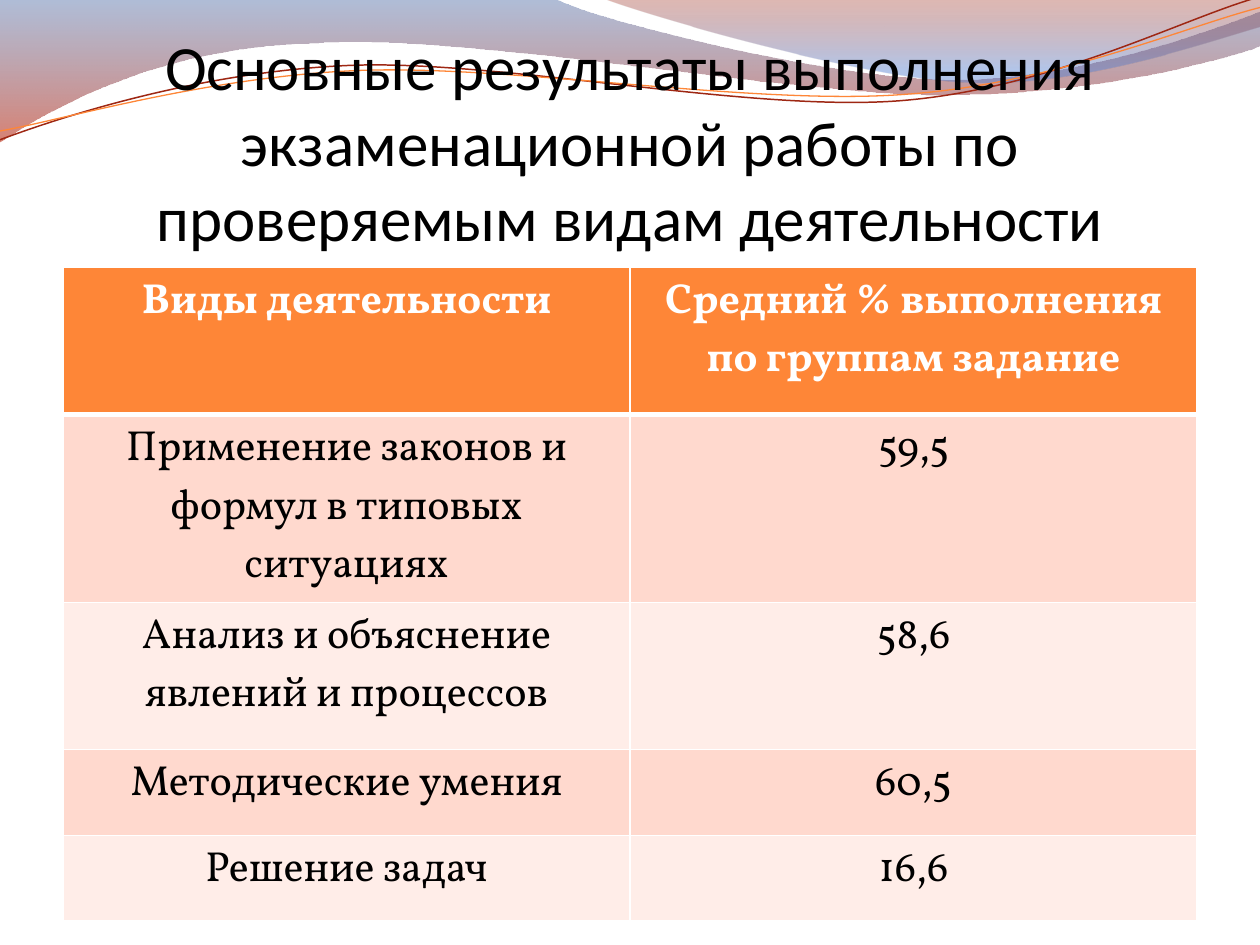
from dataclasses import dataclass
from math import cos, radians, sin

from lxml import etree
from pptx import Presentation, util as u
from pptx.dml.color import RGBColor
from pptx.enum import text
from pptx.oxml.ns import qn


@dataclass(frozen=True)
class Theme:
    head: str = "FE8637"
    bands: tuple = ("FFD9CE", "FFEDE8")
    ink: str = "000000"
    white: str = "FFFFFF"
    title_font: str = "Calibri"
    body_font: str = "Vollkorn"
    title_size: int = 36
    body_size: int = 24


@dataclass(frozen=True)
class Stop:
    place: float
    color: str
    alpha: int


@dataclass(frozen=True)
class Wave:
    start: tuple
    steps: tuple  # two numbers: a straight step; six: a Bézier curve
    stops: tuple = ()
    color: str = ""
    width: float = 0
    pivot: tuple = (0, 0)
    tilt: float = 0  # degrees counter-clockwise around the pivot


THEME = Theme()
UNITS = 1000  # freeform units per inch

WAVES = (
    Wave((0, 0), (
        (4.4, -0.01),
        (4.76, 0.17, 6.64, 0.63, 7.58, 0.63),
        (8.53, 0.63, 9.58, 0.26, 10, 0.09),
        (10.01, 0.36),
        (9.83, 0.44, 8.7, 0.76, 7.46, 0.75),
        (6.22, 0.75, 3.82, 0.28, 2.57, 0.34),
        (1.29, 0.36, 0.46, 0.83, -0.01, 1.13),
        (0, 0),
    ), stops=(Stop(0, "4F6EA8", 45), Stop(1, "B61A00", 55))),
    Wave((4.79, -0.01), (
        (5.09, 0.11, 6.82, 0.62, 7.69, 0.65),
        (8.56, 0.69, 9.61, 0.32, 10, 0.21),
        (10, 0),
        (4.79, -0.01),
    ), stops=(Stop(0, "951500", 30), Stop(0.8, "5681D1", 45))),
    Wave((0, 1.11), (
        (0.48, 0.93, 1.58, 0.57, 2.77, 0.52),
        (3.95, 0.47, 5.93, 0.89, 7.13, 0.8),
        (8.33, 0.71, 9.38, 0.15, 9.98, -0.02),
    ), color="9E2713", width=0.85, pivot=(4.99, 0.57), tilt=2.7),
    Wave((0, 1.04), (
        (0.47, 0.96, 1.64, 0.61, 2.83, 0.56),
        (4.03, 0.51, 5.97, 0.84, 7.17, 0.75),
        (8.36, 0.67, 9.41, 0.21, 10, 0.06),
    ), color="FE8637", width=0.75, pivot=(5, 0.59), tilt=2.7),
)

TITLE = ("Основные результаты выполнения экзаменационной работы "
         "по проверяемым видам деятельности")
ROWS = (
    (1.17, "Виды деятельности", "Средний % выполнения по группам задание"),
    (1.17, "Применение законов и формул в типовых ситуациях", "59,5"),
    (1.17, "Анализ и объяснение явлений и процессов", "58,6"),
    (0.68, "Методические умения", "60,5"),
    (0.68, "Решение задач", "16,6"),
)


def rgb(code: str) -> RGBColor:
    return RGBColor.from_string(code)


def trace(wave: Wave) -> list:
    """List all points of a wave, level, in freeform units."""
    flat = wave.start + sum(wave.steps, ())
    (cx, cy), turn = wave.pivot, radians(wave.tilt)
    spots = []
    for x, y in zip(flat[::2], flat[1::2]):
        dx, dy = x - cx, y - cy
        spots.append(((cx + dx * cos(turn) - dy * sin(turn)) * UNITS,
                      (cy + dx * sin(turn) + dy * cos(turn)) * UNITS))
    return spots


def bend(shape, steps: tuple) -> None:
    """Join each three straight pieces of a curved step into one curve."""
    pieces = iter(list(shape.element.iter(qn("a:lnTo"))))
    for step in steps:
        group = [next(pieces) for _ in range(len(step) // 2)]
        if len(group) == 3:
            curve = etree.Element(qn("a:cubicBezTo"))
            group[0].addprevious(curve)
            for piece in group:
                curve.append(piece[0])
                piece.getparent().remove(piece)


def draw_wave(slide, wave: Wave) -> None:
    first, *rest = trace(wave)
    pen = slide.shapes.build_freeform(*first, scale=u.Inches(1) / UNITS)
    pen.add_line_segments(rest, close=bool(wave.stops))
    shape = pen.convert_to_shape()
    bend(shape, wave.steps)
    shape.rotation = -wave.tilt % 360
    shape.shadow.inherit = False
    if not wave.stops:
        shape.fill.background()
        shape.line.color.rgb = rgb(wave.color)
        shape.line.width = u.Pt(wave.width)
        return
    shape.line.fill.background()
    shape.fill.gradient()
    shape.fill.gradient_angle = 270  # top to bottom
    for stop, want in zip(shape.fill.gradient_stops, wave.stops):
        stop.position = want.place
        stop.color.rgb = rgb(want.color)
    for node, want in zip(shape.element.iter(qn("a:srgbClr")), wave.stops):
        etree.SubElement(node, qn("a:alpha"), val=str(want.alpha * 1000))


def style(frame, font: str, size: int, color: str, bold: bool = False) -> None:
    for para in frame.paragraphs:
        para.alignment = text.PP_ALIGN.CENTER
        for run in para.runs:
            run.font.name = font
            run.font.size = u.Pt(size)
            run.font.bold = bold
            run.font.color.rgb = rgb(color)


def draw_title(slide) -> None:
    title = slide.shapes.title
    title.element.getparent().append(title.element)  # in front of the waves
    title.left, title.top = u.Inches(0.5), u.Inches(0.77)
    title.width, title.height = u.Inches(9), u.Inches(1.25)
    frame = title.text_frame
    frame.text = TITLE
    frame.word_wrap = True
    frame.auto_size = text.MSO_AUTO_SIZE.NONE
    frame.vertical_anchor = text.MSO_ANCHOR.BOTTOM
    frame.margin_left = frame.margin_right = frame.margin_bottom = 0
    frame.margin_top = u.Inches(0.05)
    style(frame, THEME.title_font, THEME.title_size, THEME.ink)


def edge(cell, side: str, width: float) -> None:
    props = cell._tc.get_or_add_tcPr()
    line = etree.SubElement(props, qn(f"a:ln{side}"), w=str(u.Pt(width)))
    fill = etree.SubElement(line, qn("a:solidFill"))
    etree.SubElement(fill, qn("a:srgbClr"), val=THEME.white)


def draw_table(slide) -> None:
    high = sum(row[0] for row in ROWS)
    table = slide.shapes.add_table(
        len(ROWS), 2, u.Inches(0.5), u.Inches(2.12),
        u.Inches(9), u.Inches(high)).table
    for r, (tall, *words) in enumerate(ROWS):
        head = r == 0
        table.rows[r].height = u.Inches(tall)
        for c, word in enumerate(words):
            cell = table.cell(r, c)
            for side in "LRTB":
                edge(cell, side, 3 if head and side == "B" else 1)
            cell.fill.solid()
            cell.fill.fore_color.rgb = rgb(
                THEME.head if head else THEME.bands[(r - 1) % 2])
            cell.text_frame.text = word
            style(cell.text_frame, THEME.body_font, THEME.body_size,
                  THEME.white if head else THEME.ink, head)


def main() -> None:
    deck = Presentation()
    deck.slide_width, deck.slide_height = u.Inches(10), u.Inches(7.5)
    slide = deck.slides.add_slide(deck.slide_layouts[5])  # title only
    # Wavy banner
    for wave in WAVES:
        draw_wave(slide, wave)
    # Heading and results
    draw_title(slide)
    draw_table(slide)
    deck.save("out.pptx")


if __name__ == "__main__":
    main()
